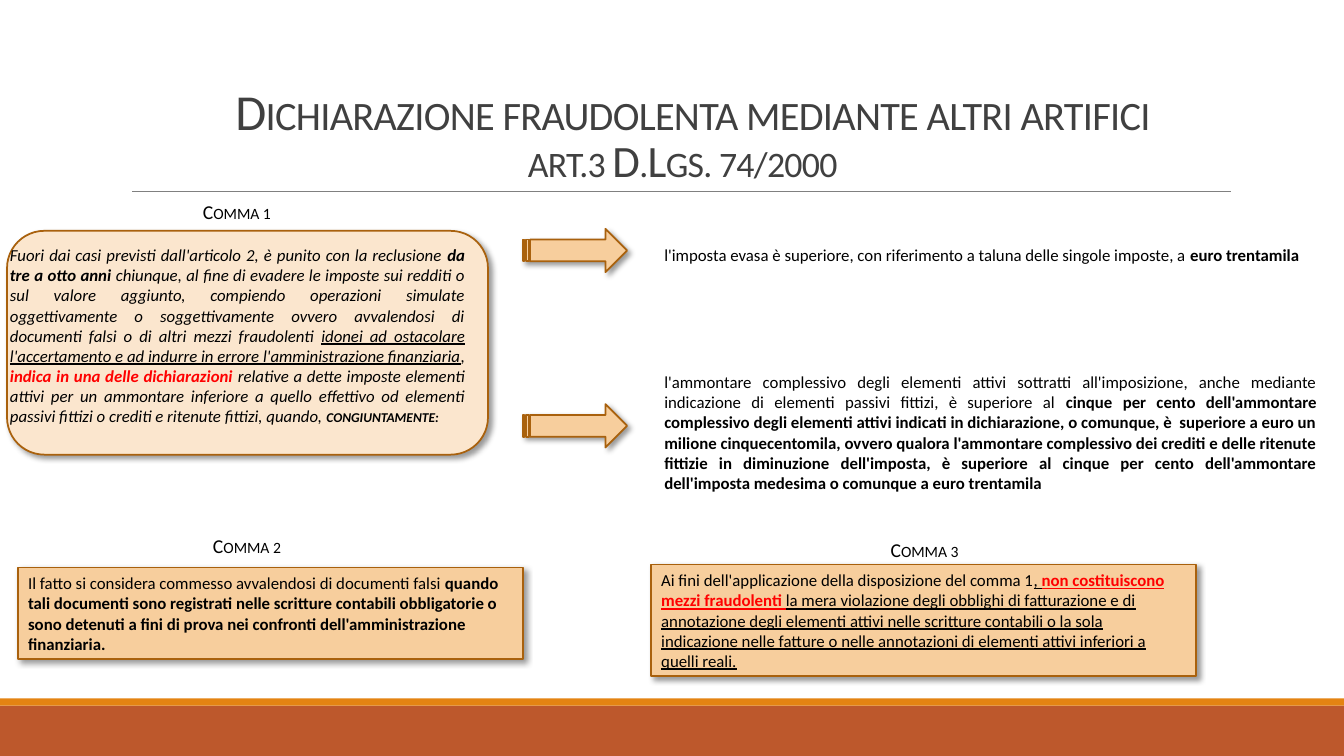
from lxml import etree
from pptx import Presentation
from pptx.dml.color import RGBColor
from pptx.enum.shapes import MSO_CONNECTOR, MSO_SHAPE
from pptx.enum.text import MSO_ANCHOR, PP_ALIGN
from pptx.oxml.ns import qn
from pptx.util import Inches, Pt

RECTANGLE = MSO_SHAPE.RECTANGLE
ROUNDED = MSO_SHAPE.ROUNDED_RECTANGLE
ARROW = MSO_SHAPE.STRIPED_RIGHT_ARROW
STRAIGHT = MSO_CONNECTOR.STRAIGHT
LEFT, CENTER, JUSTIFY = PP_ALIGN.LEFT, PP_ALIGN.CENTER, PP_ALIGN.JUSTIFY
TOP, MIDDLE, BOTTOM = MSO_ANCHOR.TOP, MSO_ANCHOR.MIDDLE, MSO_ANCHOR.BOTTOM

FONT = "Calibri"
COLORS = {
    "band": "BD582C", "stripe": "E48312", "rule": "808080", "title": "404040",
    "text": "000000", "alert": "FF0000", "pale": "FBE6CE", "fill": "F7CE9D",
    "border": "A9610D", "shadow": "000000",
}
BOLD = {"bold": True}
UNDERLINE = {"underline": True}
ALERT = {"bold": True, "color": "alert"}

COMMA_1 = [[
    ("Fuori dai casi previsti dall'articolo 2, è punito con la reclusione ", {}),
    ("da tre a otto anni ", BOLD),
    ("chiunque, al fine di evadere le imposte sui redditi o sul valore aggiunto, "
     "compiendo operazioni simulate oggettivamente o soggettivamente ovvero "
     "avvalendosi di documenti falsi o di altri mezzi fraudolenti ", {}),
    ("idonei ad ostacolare l'accertamento e ad indurre in errore "
     "l'amministrazione finanziaria", UNDERLINE),
    (", ", {}),
    ("indica in una delle dichiarazioni ", ALERT),
    ("relative a dette imposte elementi attivi per un ammontare inferiore a quello "
     "effettivo od elementi passivi fittizi o crediti e ritenute fittizi, quando, ", {}),
    ("congiuntamente:", {"bold": True, "small_caps": True}),
]]
TAX_THRESHOLD = [[
    ("l'imposta evasa è superiore, con riferimento a taluna delle singole imposte, a ", {}),
    ("euro trentamila", BOLD),
]]
INCOME_THRESHOLD = [[
    ("l'ammontare complessivo degli elementi attivi sottratti all'imposizione, anche "
     "mediante indicazione di elementi passivi fittizi, è superiore al ", {}),
    ("cinque per cento dell'ammontare complessivo degli elementi attivi indicati in "
     "dichiarazione, o comunque, è  superiore a euro un milione cinquecentomila, ovvero "
     "qualora l'ammontare complessivo dei crediti e delle ritenute fittizie in "
     "diminuzione dell'imposta, è superiore al cinque per cento dell'ammontare "
     "dell'imposta medesima o comunque a euro trentamila", BOLD),
]]
COMMA_2 = [[
    ("Il fatto si considera commesso avvalendosi di documenti falsi ", {}),
    ("quando tali documenti sono registrati nelle scritture contabili obbligatorie o sono "
     "detenuti a fini di prova nei confronti dell'amministrazione finanziaria.", BOLD),
]]
COMMA_3 = [
    [("Ai fini dell'applicazione della disposizione del comma 1", {}),
     (", ", UNDERLINE), ("non costituiscono", {**ALERT, **UNDERLINE})],
    [("mezzi fraudolenti ", {**ALERT, **UNDERLINE}),
     ("la mera violazione degli obblighi di fatturazione e di", UNDERLINE)],
    [("annotazione degli elementi attivi nelle scritture contabili o la sola", UNDERLINE)],
    [("indicazione nelle fatture o nelle annotazioni di elementi attivi inferiori a", UNDERLINE)],
    [("quelli reali.", UNDERLINE)],
]


def rgb(name):
    return RGBColor.from_string(COLORS[name])


def write_text(shape, paragraphs, align=LEFT, anchor=TOP, line_spacing=None, **base):
    frame = shape.text_frame
    frame.word_wrap = True
    frame.vertical_anchor = anchor
    for index, runs in enumerate(paragraphs):
        paragraph = frame.paragraphs[0] if index == 0 else frame.add_paragraph()
        paragraph.alignment = align
        paragraph.line_spacing = line_spacing
        for number, (text, style) in enumerate(runs):
            if text == "\n":
                paragraph.add_line_break()
                continue
            look = {"size": 12, "color": "text", **base, **style}
            run = paragraph.add_run()
            run.text = text
            font = run.font
            font.name, font.size = FONT, Pt(look["size"])
            font.color.rgb = rgb(look["color"])
            font.bold = look.get("bold", False)
            font.italic = look.get("italic", False)
            font.underline = look.get("underline", False)
            properties = run._r.get_or_add_rPr()
            if look.get("small_caps"):
                properties.set("cap", "small")
            if "spacing" in look:
                properties.set("spc", str(look["spacing"]))


def add_text(slide, box, paragraphs, **style):
    shape = slide.shapes.add_textbox(*map(Inches, box))
    write_text(shape, paragraphs, **style)


def add_filled(slide, kind, box, fill):
    shape = slide.shapes.add_shape(kind, *map(Inches, box))
    shape.shadow.inherit = False
    shape.fill.solid()
    shape.fill.fore_color.rgb = rgb(fill)
    shape.line.fill.background()
    return shape


def add_panel(slide, kind, box, fill="fill"):
    shape = add_filled(slide, kind, box, fill)
    shape.line.color.rgb = rgb("border")
    shape.line.width = Pt(1.25)
    effects = shape._element.spPr.find(qn("a:effectLst"))
    shadow = etree.SubElement(effects, qn("a:outerShdw"), blurRad=str(Pt(4)),
                              dist=str(Pt(3)), dir="2700000", algn="tl", rotWithShape="0")
    color = etree.SubElement(shadow, qn("a:srgbClr"), val=COLORS["shadow"])
    etree.SubElement(color, qn("a:alpha"), val="40000")
    return shape


def add_heading(slide, left, top, text):
    add_text(slide, (left, top, 2, 0.34), [[(text, {})]],
             align=CENTER, size=14, small_caps=True)


def add_footer(slide, left, top, width, height):
    stripe = 0.07
    add_filled(slide, RECTANGLE, (left, top + stripe, width, height - stripe), "band")
    add_filled(slide, RECTANGLE, (left, top, width, stripe), "stripe")


def add_title(slide, left, top, width, height):
    bottom = top + height
    rule = slide.shapes.add_connector(STRAIGHT, Inches(left + 0.11), Inches(bottom),
                                      Inches(left + width + 0.01), Inches(bottom))
    rule.line.color.rgb = rgb("rule")
    rule.line.width = Pt(0.5)
    etree.SubElement(rule._element.spPr, qn("a:effectLst"))
    runs = [("Dichiarazione fraudolenta mediante altri artifici", {"size": 36}),
            ("\n", {}), ("art.3 D.Lgs. 74/2000", {"size": 32})]
    add_text(slide, (left, top, width, height), [runs], align=CENTER, anchor=BOTTOM,
             line_spacing=0.85, color="title", small_caps=True, spacing=-50)


def add_comma_1(slide, left, top, width, height):
    add_heading(slide, left + 1.28, top - 0.36, "Comma 1")
    add_panel(slide, ROUNDED, (left, top, width, height), "pale")
    add_text(slide, (left - 0.07, top + 0.09, width - 0.06, 1.92), COMMA_1,
             align=JUSTIFY, italic=True)


def add_threshold(slide, left, arrow_top, text_top, height, paragraphs, align):
    add_panel(slide, ARROW, (left, arrow_top, 1.03, 0.43))
    add_text(slide, (left + 1.3, text_top, 6.67, height), paragraphs, align=align)


def add_comma_box(slide, box, heading_left, heading_top, heading, paragraphs):
    add_heading(slide, heading_left, heading_top, heading)
    write_text(add_panel(slide, RECTANGLE, box), paragraphs, anchor=MIDDLE)


def main():
    presentation = Presentation()
    presentation.slide_width = Inches(13.33)
    presentation.slide_height = Inches(7.5)
    slide = presentation.slides.add_slide(presentation.slide_layouts[6])
    add_footer(slide, 0, 6.93, 13.33, 0.57)
    add_title(slide, 1.2, 0.31, 11, 1.59)
    add_comma_1(slide, 0.07, 2.29, 4.77, 2.22)
    add_threshold(slide, 5.19, 2.27, 2.38, 0.3, TAX_THRESHOLD, LEFT)
    add_threshold(slide, 5.19, 4.01, 3.64, 1.31, INCOME_THRESHOLD, JUSTIFY)
    add_comma_box(slide, (0.18, 5.63, 5.01, 0.91), 1.45, 5.25, "Comma 2", COMMA_2)
    add_comma_box(slide, (6.46, 5.6, 5.4, 1.11), 8.17, 5.29, "Comma 3", COMMA_3)
    presentation.save("out.pptx")


if __name__ == "__main__":
    main()
